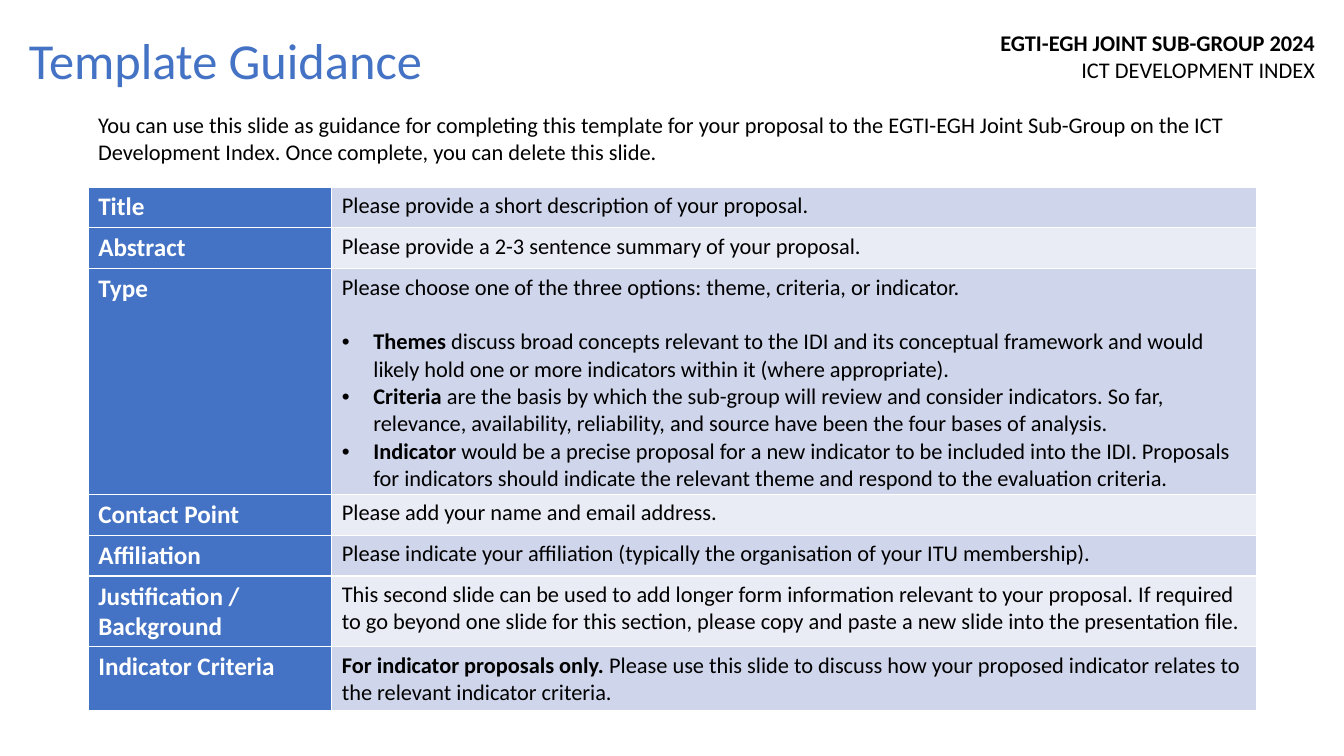
from lxml import etree
from pptx import Presentation
from pptx.dml.color import RGBColor
from pptx.enum.text import MSO_ANCHOR, MSO_AUTO_SIZE, PP_ALIGN
from pptx.oxml.ns import qn
from pptx.util import Pt

PX = 9525
LEFT, RIGHT = PP_ALIGN.LEFT, PP_ALIGN.RIGHT
TOP = MSO_ANCHOR.TOP
FIXED = MSO_AUTO_SIZE.NONE

BLUE = RGBColor(0x44, 0x72, 0xC4)
WHITE = RGBColor(0xFF, 0xFF, 0xFF)
BLACK = RGBColor(0x00, 0x00, 0x00)
BANDS = (RGBColor(0xCF, 0xD5, 0xEA), RGBColor(0xE9, 0xEB, 0xF5))

TEXT = {"name": "Calibri", "size": Pt(16), "bold": False}
HEAD = {"name": "Calibri", "size": Pt(36), "bold": False}
LABEL = {"name": "Calibri", "size": Pt(18), "bold": True}
BOLD = {**TEXT, "bold": True}

INTRO = ("You can use this slide as guidance for completing this template for your "
         "proposal to the EGTI-EGH Joint Sub-Group on the ICT Development Index. "
         "Once complete, you can delete this slide.")

TYPES = [
    ("Themes", " discuss broad concepts relevant to the IDI and its conceptual framework "
     "and would likely hold one or more indicators within it (where appropriate)."),
    ("Criteria", " are the basis by which the sub-group will review and consider indicators. "
     "So far, relevance, availability, reliability, and source have been the four bases "
     "of analysis."),
    ("Indicator", " would be a precise proposal for a new indicator to be included into the "
     "IDI. Proposals for indicators should indicate the relevant theme and respond to the "
     "evaluation criteria."),
]

ROWS = [
    ("Title", 39, "", "Please provide a short description of your proposal.", []),
    ("Abstract", 39, "", "Please provide a 2-3 sentence summary of your proposal.", []),
    ("Type", 214, "",
     "Please choose one of the three options: theme, criteria, or indicator.", TYPES),
    ("Contact Point", 39, "", "Please add your name and email address.", []),
    ("Affiliation", 39, "",
     "Please indicate your affiliation (typically the organisation of your ITU membership).",
     []),
    ("Justification / Background", 67, "",
     "This second slide can be used to add longer form information relevant to your "
     "proposal. If required to go beyond one slide for this section, please copy and paste "
     "a new slide into the presentation file.", []),
    ("Indicator Criteria", 60, "For indicator proposals only.",
     " Please use this slide to discuss how your proposed indicator relates to the relevant "
     "indicator criteria.", []),
]


def scale(box):
    """Turn a box in px into EMU."""
    return [n * PX for n in box]


def write(para, text, style, color=BLACK):
    """Add a run with the given format."""
    run = para.add_run()
    run.text = text
    for key, value in style.items():
        setattr(run.font, key, value)
    run.font.color.rgb = color


def bullet(para):
    """Give a paragraph a hanging bullet."""
    props = para._p.get_or_add_pPr()
    props.set("marL", str(30 * PX))
    props.set("indent", str(-30 * PX))
    etree.SubElement(props, qn("a:buFont")).set("typeface", "Arial")
    etree.SubElement(props, qn("a:buChar")).set("char", "•")


def paint(cell, color):
    """Fill a cell and rule its four sides in white."""
    props = cell._tc.get_or_add_tcPr()
    for side in ("lnL", "lnR", "lnT", "lnB"):
        line = etree.SubElement(props, qn(f"a:{side}"), w=str(Pt(1)))
        fill = etree.SubElement(line, qn("a:solidFill"))
        etree.SubElement(fill, qn("a:srgbClr"), val=str(WHITE))
    cell.fill.solid()
    cell.fill.fore_color.rgb = color


def add_title(slide, box):
    """Place the slide title in its placeholder."""
    title = slide.shapes.title
    title.left, title.top, title.width, title.height = scale(box)
    frame = title.text_frame
    form = {"auto_size": FIXED, "word_wrap": False, "vertical_anchor": TOP}
    for key, value in form.items():
        setattr(frame, key, value)
    frame.paragraphs[0].alignment = LEFT
    write(frame.paragraphs[0], "Template Guidance", HEAD, BLUE)


def add_text(slide, box, lines, align, wrap):
    """Place a text box with one paragraph per line."""
    frame = slide.shapes.add_textbox(*scale(box)).text_frame
    frame.word_wrap = wrap
    for i, (text, style) in enumerate(lines):
        para = frame.add_paragraph() if i else frame.paragraphs[0]
        para.alignment = align
        write(para, text, style)


def fill_body(frame, lead, text, items):
    """Write the guidance of one row, with any bullets below."""
    first = frame.paragraphs[0]
    if lead:
        write(first, lead, BOLD)
    write(first, text, TEXT)
    for i, (term, note) in enumerate(items):
        para = frame.add_paragraph()
        if i == 0:
            para.space_before = Pt(19.5)
        bullet(para)
        write(para, term, BOLD)
        write(para, note, TEXT)


def add_guide(slide, box, split):
    """Place the guidance table, its label column split px wide."""
    table = slide.shapes.add_table(len(ROWS), 2, *scale(box)).table
    table.first_row = table.horz_banding = False
    table.columns[0].width = split * PX
    table.columns[1].width = (box[2] - split) * PX
    for i, (label, height, lead, text, items) in enumerate(ROWS):
        table.rows[i].height = height * PX
        name, body = table.cell(i, 0), table.cell(i, 1)
        paint(name, BLUE)
        paint(body, BANDS[i % 2])
        write(name.text_frame.paragraphs[0], label, LABEL, WHITE)
        fill_body(body.text_frame, lead, text, items)


def main():
    """Build the slide and save it."""
    deck = Presentation()
    deck.slide_width, deck.slide_height = scale((1280, 720))
    slide = deck.slides.add_slide(deck.slide_layouts[5])
    add_text(slide, (939, 23, 323, 61), [("EGTI-EGH JOINT SUB-GROUP 2024", BOLD),
                                         ("ICT DEVELOPMENT INDEX", TEXT)], RIGHT, False)
    add_title(slide, (18, 23, 397, 68))
    add_guide(slide, (84, 178, 1113, sum(row[1] for row in ROWS)), 232)
    add_text(slide, (84, 101, 1113, 61), [(INTRO, TEXT)], LEFT, True)
    deck.save("out.pptx")


if __name__ == "__main__":
    main()
